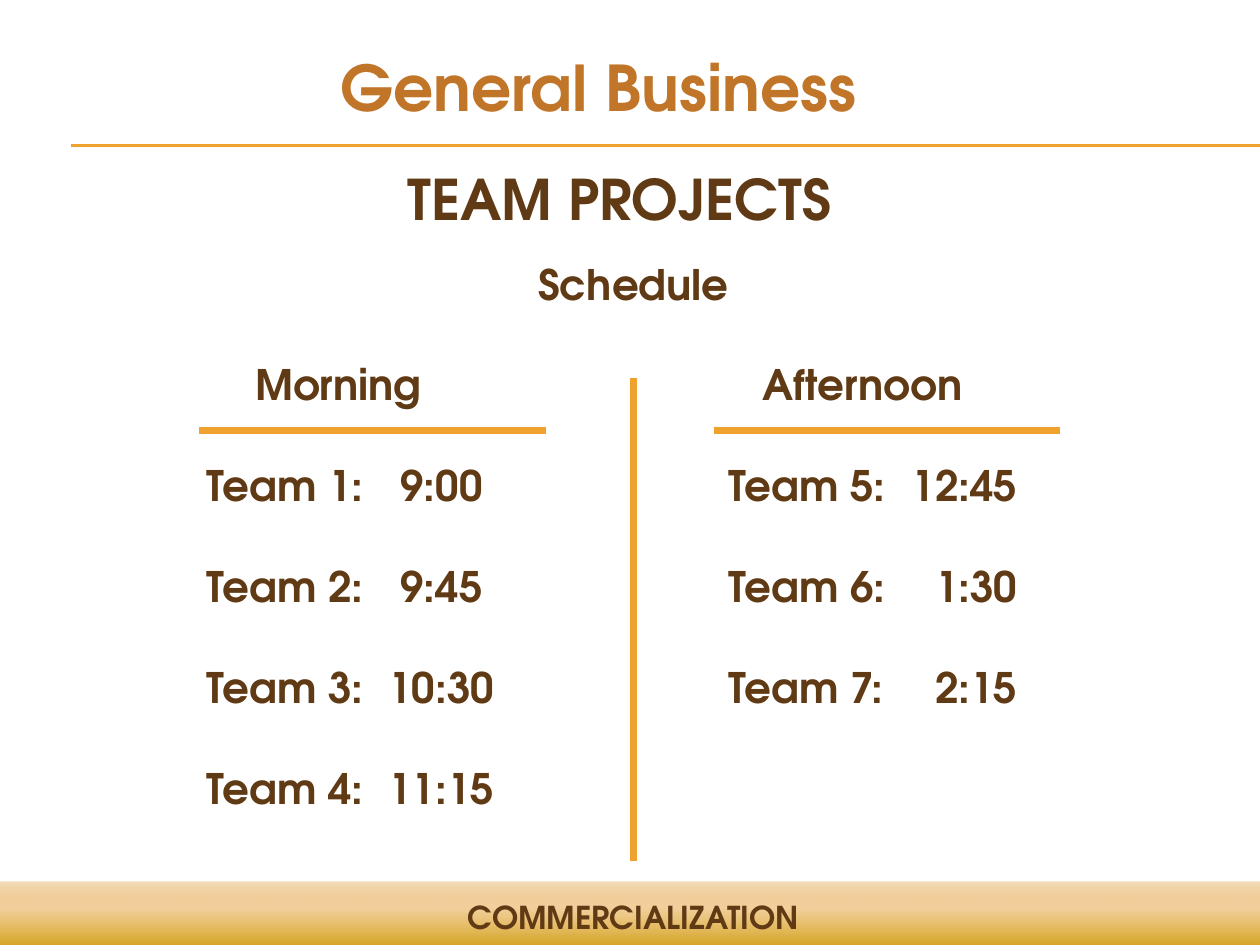
"""Build the team projects schedule slide."""
from lxml import etree
from pptx import Presentation
from pptx.dml.color import RGBColor
from pptx.enum.shapes import MSO_CONNECTOR, MSO_SHAPE
from pptx.enum.text import PP_ALIGN
from pptx.oxml import parse_xml
from pptx.oxml.ns import qn
from pptx.util import Pt

STRAIGHT, RECTANGLE = MSO_CONNECTOR.STRAIGHT, MSO_SHAPE.RECTANGLE
CENTER, LEFT = PP_ALIGN.CENTER, PP_ALIGN.LEFT
FONT = "TeX Gyre Adventor"
COLORS = {"title": "C17529", "text": "603A14", "rule": "F0A22E"}
BAND_STOPS = [(0, "CC9900", 100), (65, "EFC17E", 75), (100, "D68000", 25)]
DRAWING_NS = "http://schemas.openxmlformats.org/drawingml/2006/main"

HEADLINES = [
    ("COMMERCIALIZATION", (19, 892, 1228, 50), 18, "text", 13),
    ("General Business", (105, 42, 955, 89), 36, "title", 44),
    ("TEAM PROJECTS", (249, 158, 741, 81), 32, "text", 13),
]
SCHEDULE_BOX = (137, 252, 993, 759)
PERIODS = ("Morning", "Afternoon")
MORNING = [("Team 1:", "9:00"), ("Team 2:", "9:45"), ("Team 3:", "10:30"), ("Team 4:", "11:15")]
AFTERNOON = [("Team 5:", "12:45"), ("Team 6:", "1:30"), ("Team 7:", "2:15")]
PERIOD_TABS = [(189, "ctr"), (713, "ctr")]
TEAM_TABS = [(57, "l"), (292, "ctr"), (579, "l"), (868, "r")]
RULES = [
    ((71, 145), (1260, 145), 0.75),
    ((71, 146), (1260, 146), 0.75),
    ((634, 378), (634, 861), 4),
    ((199, 431), (546, 431), 4),
    ((714, 431), (1060, 431), 4),
]


def px(length):
    return round(length * 914400 / 126)


def add_band(slide):
    band = slide.shapes.add_shape(RECTANGLE, px(-1), px(882), px(1264), px(73))
    band.shadow.inherit = False
    band.line.fill.background()
    stops = "".join(
        f'<a:gs pos="{pos * 1000}"><a:srgbClr val="{color}">'
        f'<a:alpha val="{alpha * 1000}"/></a:srgbClr></a:gs>'
        for pos, color, alpha in BAND_STOPS
    )
    gradient = parse_xml(
        f'<a:gradFill xmlns:a="{DRAWING_NS}" rotWithShape="1"><a:gsLst>{stops}</a:gsLst>'
        '<a:lin ang="16200000" scaled="0"/></a:gradFill>'
    )
    band._element.spPr.find(qn("a:prstGeom")).addnext(gradient)


def add_rule(slide, start, end, width):
    rule = slide.shapes.add_connector(STRAIGHT, *map(px, start + end))
    rule.line.color.rgb = RGBColor.from_string(COLORS["rule"])
    rule.line.width = Pt(width)
    etree.SubElement(rule._element.spPr, qn("a:effectLst"))


def add_frame(slide, box):
    frame = slide.shapes.add_textbox(*map(px, box)).text_frame
    frame.word_wrap = True
    return frame


def write(paragraph, text, size, color, align=CENTER, tabs=()):
    paragraph.text = text
    paragraph.alignment = align
    if tabs:
        tab_list = etree.SubElement(paragraph._p.get_or_add_pPr(), qn("a:tabLst"))
        for pos, kind in tabs:
            etree.SubElement(tab_list, qn("a:tab"), pos=str(px(pos)), algn=kind)
    font = paragraph.font
    font.name, font.size, font.bold = FONT, Pt(size), True
    font.color.rgb = RGBColor.from_string(COLORS[color])


def add_schedule(slide):
    frame = add_frame(slide, SCHEDULE_BOX)
    write(frame.paragraphs[0], "Schedule", 24, "text")
    rows = [(PERIODS, PERIOD_TABS)]
    for i, morning in enumerate(MORNING):
        afternoon = AFTERNOON[i] if i < len(AFTERNOON) else ()
        rows.append((morning + afternoon, TEAM_TABS))
    for cells, tabs in rows:
        row = frame.add_paragraph()
        write(row, "".join("\t" + cell for cell in cells), 24, "text", LEFT, tabs)
        row.space_before = Pt(28.8)


def main():
    deck = Presentation()
    deck.slide_width, deck.slide_height = px(1260), px(945)
    slide = deck.slides.add_slide(deck.slide_layouts[6])
    add_band(slide)
    for text, box, size, color, margin in HEADLINES:
        frame = add_frame(slide, box)
        frame.margin_left = px(margin)
        write(frame.paragraphs[0], text, size, color)
    add_schedule(slide)
    for start, end, width in RULES:
        add_rule(slide, start, end, width)
    deck.save("out.pptx")


if __name__ == "__main__":
    main()
